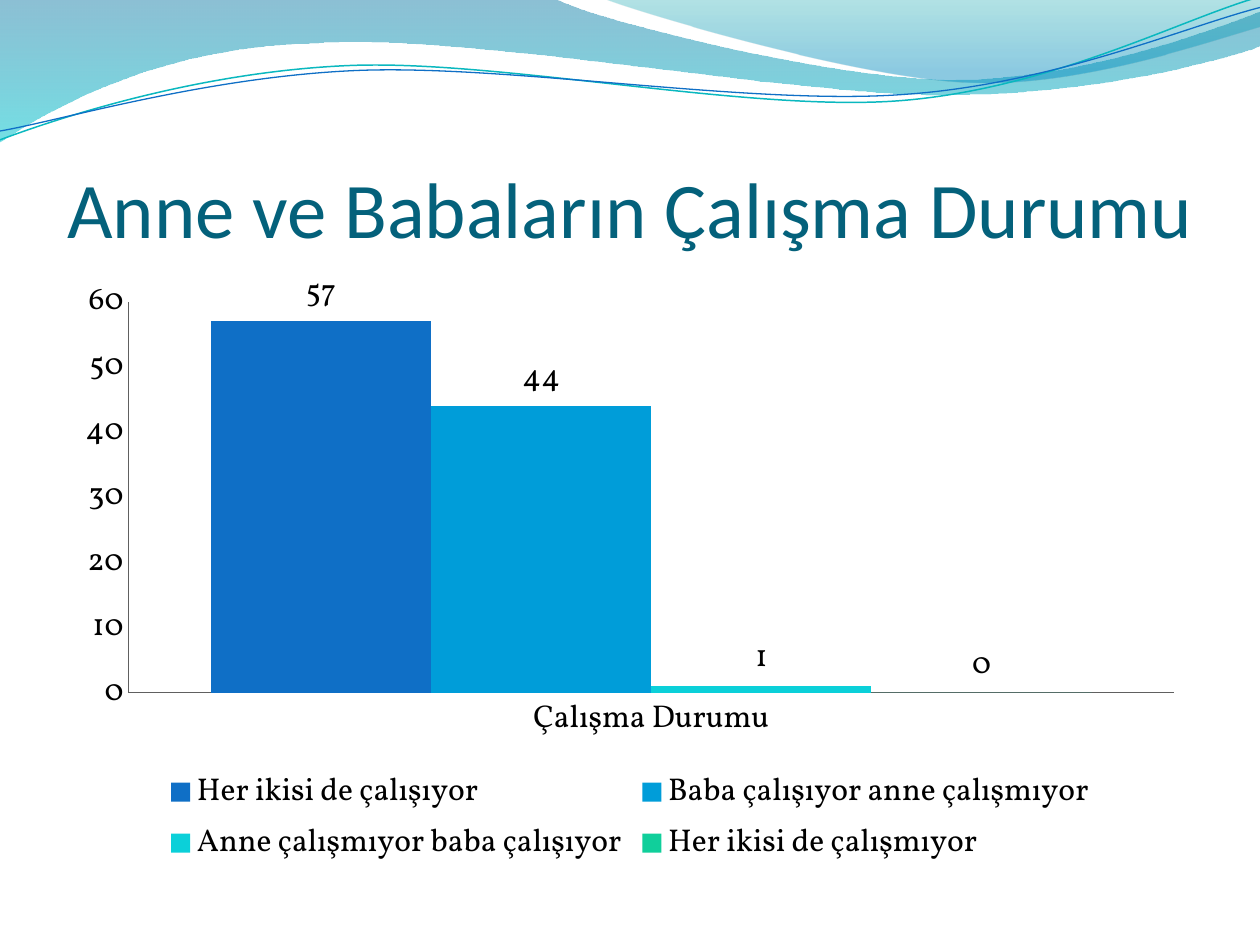
from math import cos, radians, sin

from lxml import etree
from pptx import Presentation
from pptx.chart.data import CategoryChartData
from pptx.dml.color import RGBColor
from pptx.enum.chart import XL_CHART_TYPE, XL_LABEL_POSITION, XL_LEGEND_POSITION, XL_TICK_MARK
from pptx.enum.text import MSO_ANCHOR, MSO_AUTO_SIZE, PP_ALIGN
from pptx.oxml.ns import qn
from pptx.util import Inches, Pt

COLUMNS = XL_CHART_TYPE.COLUMN_CLUSTERED
LABEL_ABOVE = XL_LABEL_POSITION.OUTSIDE_END
LEGEND_BOTTOM = XL_LEGEND_POSITION.BOTTOM
NO_TICK = XL_TICK_MARK.NONE
ANCHOR_BOTTOM = MSO_ANCHOR.BOTTOM
NO_AUTOFIT = MSO_AUTO_SIZE.NONE
CENTER = PP_ALIGN.CENTER

COLORS = {
    "title": "04617B",
    "text": "000000",
    "axis": "606060",
    "deep": "0074A1",
    "aqua": "00C6CF",
    "teal": "00A1A9",
    "sky": "008BBF",
    "teal_line": "0AB8BF",
    "blue": "0F6FC6",
    "azure": "009DD9",
    "cyan": "0BD0D9",
    "green": "10CF9B",
}
TITLE_FONT = "Calibri"
CHART_FONT = "Vollkorn"
CURVE_TILT = -2.7

LEFT_WAVE = [
    (0, 0), (4.4, -0.01), (4.76, 0.17, 6.64, 0.63, 7.58, 0.63),
    (8.53, 0.63, 9.58, 0.26, 10, 0.09), (10.01, 0.36),
    (9.83, 0.44, 8.7, 0.76, 7.46, 0.75), (6.22, 0.75, 3.82, 0.28, 2.57, 0.34),
    (1.29, 0.36, 0.46, 0.83, -0.01, 1.13),
]
RIGHT_WAVE = [
    (4.79, -0.01), (5.09, 0.11, 6.82, 0.62, 7.69, 0.65),
    (8.56, 0.69, 9.61, 0.32, 10, 0.21), (10, 0),
]
TEAL_CURVE = [
    (0, 1.11), (0.48, 0.93, 1.58, 0.57, 2.77, 0.52),
    (3.95, 0.47, 5.93, 0.89, 7.13, 0.8), (8.33, 0.71, 9.38, 0.15, 9.98, -0.02),
]
BLUE_CURVE = [
    (0, 1.04), (0.47, 0.96, 1.64, 0.61, 2.83, 0.56),
    (4.03, 0.51, 5.97, 0.84, 7.17, 0.75), (8.36, 0.67, 9.41, 0.21, 10, 0.06),
]
SERIES = [
    ("Her ikisi de çalışıyor", 57, "blue"),
    ("Baba çalışıyor anne çalışmıyor", 44, "azure"),
    ("Anne çalışmıyor baba çalışıyor", 1, "cyan"),
    ("Her ikisi de çalışmıyor", 0, "green"),
]


def color(name):
    return RGBColor.from_string(COLORS[name])


def turn(point, center, degrees):
    angle = radians(degrees)
    dx, dy = point[0] - center[0], point[1] - center[1]
    return (center[0] + dx * cos(angle) - dy * sin(angle),
            center[1] + dx * sin(angle) + dy * cos(angle))


def bend_segments(shape, segments):
    lines = list(shape.element.iter(qn("a:lnTo")))
    for segment in segments[1:]:
        count = len(segment) // 2
        group, lines = lines[:count], lines[count:]
        if count == 3:
            curve = etree.Element(qn("a:cubicBezTo"))
            group[0].addprevious(curve)
            for line in group:
                curve.append(line[0])
                line.getparent().remove(line)


def add_outline(page, segments, closed, tilt=0, center=(0, 0)):
    points = [segment[i:i + 2] for segment in segments for i in range(0, len(segment), 2)]
    level = [turn(point, center, -tilt) for point in points]
    emu_points = [(Inches(x), Inches(y)) for x, y in level]
    builder = page.shapes.build_freeform(*emu_points[0])
    builder.add_line_segments(emu_points[1:], close=closed)
    shape = builder.convert_to_shape()
    bend_segments(shape, segments)
    shape.rotation = tilt
    shape.shadow.inherit = False
    return shape


def add_wave(page, segments, stops):
    shape = add_outline(page, segments, closed=True)
    shape.line.fill.background()
    shape.fill.gradient()
    shape.fill.gradient_angle = 270
    for stop, (position, name, _) in zip(shape.fill.gradient_stops, stops):
        stop.position = position
        stop.color.rgb = color(name)
    gradient = shape.element.spPr.find(qn("a:gradFill"))
    for node, (_, _, opacity) in zip(gradient.iter(qn("a:srgbClr")), stops):
        etree.SubElement(node, qn("a:alpha")).set("val", str(opacity * 1000))


def add_curve(page, segments, center, name, width):
    shape = add_outline(page, segments, closed=False, tilt=CURVE_TILT, center=center)
    shape.fill.background()
    shape.line.color.rgb = color(name)
    shape.line.width = Pt(width)


def format_font(font, name, size, tint):
    font.name = name
    font.size = Pt(size)
    font.color.rgb = color(tint)


def set_title(page, text, font, size, tint):
    title = page.shapes.title
    title.left, title.top = Inches(0.5), Inches(0.77)
    title.width, title.height = Inches(9), Inches(1.25)
    frame = title.text_frame
    frame.auto_size = NO_AUTOFIT
    frame.word_wrap = True
    frame.vertical_anchor = ANCHOR_BOTTOM
    frame.margin_left = frame.margin_right = frame.margin_bottom = 0
    frame.margin_top = Inches(0.05)
    para = frame.paragraphs[0]
    para.alignment = CENTER
    span = para.add_run()
    span.text = text
    format_font(span.font, font, size, tint)


def format_axis(axis):
    axis.has_major_gridlines = False
    axis.major_tick_mark = axis.minor_tick_mark = NO_TICK
    axis.format.line.color.rgb = color("axis")
    axis.format.line.width = Pt(0.75)


def add_status_chart(page):
    data = CategoryChartData()
    data.categories = ["Çalışma Durumu"]
    for name, value, _ in SERIES:
        data.add_series(name, [value])
    chart = page.shapes.add_chart(
        COLUMNS, Inches(0.5), Inches(2.12), Inches(9), Inches(4.8), data
    ).chart
    format_font(chart.font, CHART_FONT, 18, "text")
    chart.has_title = False
    chart.has_legend = True
    chart.legend.position = LEGEND_BOTTOM
    chart.legend.include_in_layout = False
    format_axis(chart.category_axis)
    format_axis(chart.value_axis)
    plot = chart.plots[0]
    plot.gap_width = 75
    plot.overlap = 0
    plot.vary_by_categories = False
    for series, (_, _, tint) in zip(plot.series, SERIES):
        series.format.fill.solid()
        series.format.fill.fore_color.rgb = color(tint)
        series.data_labels.show_value = True
        series.data_labels.position = LABEL_ABOVE


def main():
    deck = Presentation()
    deck.slide_width, deck.slide_height = Inches(10), Inches(7.5)
    page = deck.slides.add_slide(deck.slide_layouts[5])
    add_wave(page, LEFT_WAVE, [(0, "deep", 45), (1, "aqua", 55)])
    add_wave(page, RIGHT_WAVE, [(0, "teal", 30), (0.8, "sky", 45)])
    add_curve(page, TEAL_CURVE, (4.99, 0.58), "teal_line", 0.85)
    add_curve(page, BLUE_CURVE, (5, 0.59), "blue", 0.75)
    set_title(page, "Anne ve Babaların Çalışma Durumu", TITLE_FONT, 45, "title")
    add_status_chart(page)
    deck.save("out.pptx")


if __name__ == "__main__":
    main()
